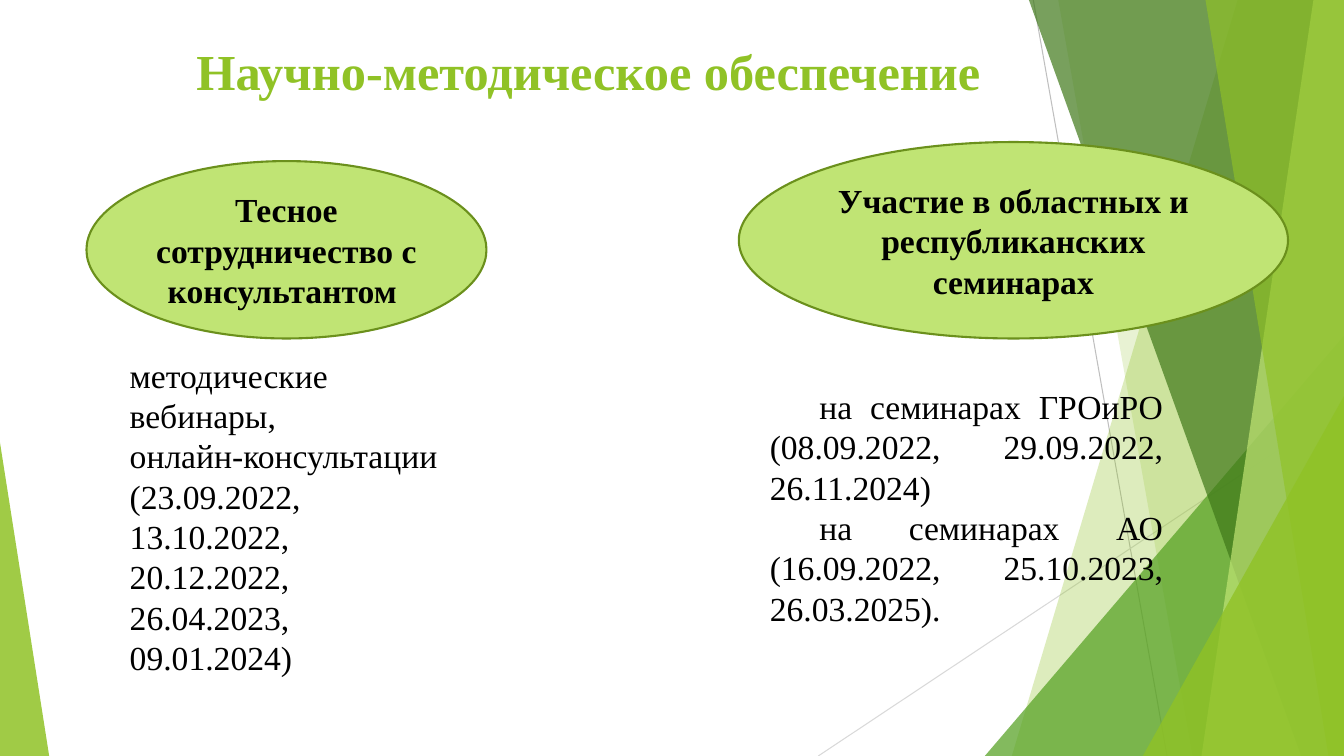
import pptx
import pptx.dml.color
import pptx.enum.shapes
import pptx.enum.text
import pptx.oxml
import pptx.oxml.ns
import pptx.util

Cm = pptx.util.Cm
Pt = pptx.util.Pt
Align = pptx.enum.text.PP_ALIGN
Preset = pptx.enum.shapes.MSO_SHAPE

WIDE, HIGH = 33.87, 19.05
INDENT = 1.25
COLORS = {
    "lime": "90C226",
    "pale": "C0E474",
    "green": "54A021",
    "dark": "3F7819",
    "edge": "6B901C",
    "gray": "BFBFBF",
    "light": "D9D9D9",
    "black": "000000",
}


class Deck:
    font = "Times New Roman"

    def __init__(self):
        self.prs = pptx.Presentation()
        self.prs.slide_width = Cm(WIDE)
        self.prs.slide_height = Cm(HIGH)
        self.slide = self.prs.slides.add_slide(self.prs.slide_layouts[6])
        self.shapes = self.slide.shapes

    def color(self, name):
        return pptx.dml.color.RGBColor.from_string(COLORS[name])

    def paint(self, shape, fill, alpha=100):
        """Give a shape a flat fill, alpha in percent, and no outline."""
        shape.shadow.inherit = False
        shape.fill.solid()
        shape.fill.fore_color.rgb = self.color(fill)
        shape.line.fill.background()
        if alpha < 100:
            tone = shape._element.spPr.find(".//" + pptx.oxml.ns.qn("a:srgbClr"))
            node = pptx.oxml.parse_xml(
                f'<a:alpha {pptx.oxml.ns.nsdecls("a")} val="{alpha * 1000}"/>')
            tone.append(node)

    def line(self, start, end, color):
        kind = pptx.enum.shapes.MSO_CONNECTOR.STRAIGHT
        line = self.shapes.add_connector(kind, *map(Cm, start + end))
        line.line.color.rgb = self.color(color)
        line.line.width = Pt(0.75)
        line._element.spPr.append(pptx.oxml.parse_xml(
            f'<a:effectLst {pptx.oxml.ns.nsdecls("a")}/>'))

    def band(self, top, bottom, fill, alpha):
        """Fill from a slanted left edge to the right side of the slide."""
        form = self.shapes.build_freeform(Cm(top), 0, scale=1.0)
        points = [(WIDE, 0), (WIDE, HIGH), (bottom, HIGH)]
        form.add_line_segments([(Cm(x), Cm(y)) for x, y in points], close=True)
        self.paint(form.convert_to_shape(), fill, alpha)

    def wedge(self, left, top, right, peak, fill, alpha):
        """Stand a triangle on the bottom edge, peak 0 left to 1 right."""
        shape = self.shapes.add_shape(
            Preset.ISOSCELES_TRIANGLE,
            Cm(left), Cm(top), Cm(right - left), Cm(HIGH - top))
        shape.adjustments[0] = peak
        self.paint(shape, fill, alpha)

    def letter(self, frame, text, size=24, color="black", bold=False,
               align=Align.LEFT, indent=0):
        """Put styled text into a frame, one paragraph a line."""
        frame.word_wrap = True
        frame.text = text
        for para in frame.paragraphs:
            para.alignment = align
            if indent:
                para._p.get_or_add_pPr().set("indent", str(Cm(indent)))
            for run in para.runs:
                run.font.name = self.font
                run.font.size = Pt(size)
                run.font.bold = bold
                run.font.color.rgb = self.color(color)

    def oval(self, box, text):
        shape = self.shapes.add_shape(Preset.OVAL, *map(Cm, box))
        self.paint(shape, "pale")
        shape.line.color.rgb = self.color("edge")
        shape.line.width = Pt(1.5)
        frame = shape.text_frame
        frame.vertical_anchor = pptx.enum.text.MSO_ANCHOR.MIDDLE
        self.letter(frame, text, bold=True, align=Align.CENTER)

    def text(self, box, text, **style):
        frame = self.shapes.add_textbox(*map(Cm, box)).text_frame
        self.letter(frame, text, **style)


def main():
    deck = Deck()

    deck.line((26.04, 0), (29.41, HIGH), "gray")
    deck.line((WIDE, 10.24), (20.62, HIGH), "light")
    deck.band(31.19, 25.5, "lime", 30)
    deck.band(26.67, 30.05, "lime", 20)
    deck.wedge(24.82, 8.46, WIDE, 1, "green", 72)
    deck.band(25.93, 32.79, "dark", 70)
    deck.band(33.1, 30.28, "pale", 70)
    deck.band(30.38, 33.48, "lime", 65)
    deck.wedge(28.8, 9.98, WIDE, 1, "lime", 80)
    deck.wedge(0, 11.15, 1.24, 0, "lime", 85)

    deck.text((3.45, 0.89, 27.43, 2.87), "Научно-методическое обеспечение",
              size=36, color="lime", bold=True, indent=INDENT)
    deck.oval((2.18, 4.06, 10.08, 4.47),
              "Тесное сотрудничество с консультантом ")
    deck.oval((18.62, 3.58, 13.84, 4.95),
              "Участие в областных и республиканских семинарах")
    deck.text((3.02, 8.81, 8.43, 8.46),
              "методические вебинары,\n"
              "онлайн-консультации\n"
              "(23.09.2022, 13.10.2022, 20.12.2022, 26.04.2023, 09.01.2024)")
    deck.text((19.15, 9.6, 10.41, 6.4),
              "на семинарах ГРОиРО (08.09.2022, 29.09.2022, 26.11.2024)\n"
              "на семинарах АО (16.09.2022, 25.10.2023, 26.03.2025).",
              align=Align.JUSTIFY, indent=INDENT)

    deck.prs.save("out.pptx")


if __name__ == "__main__":
    main()
